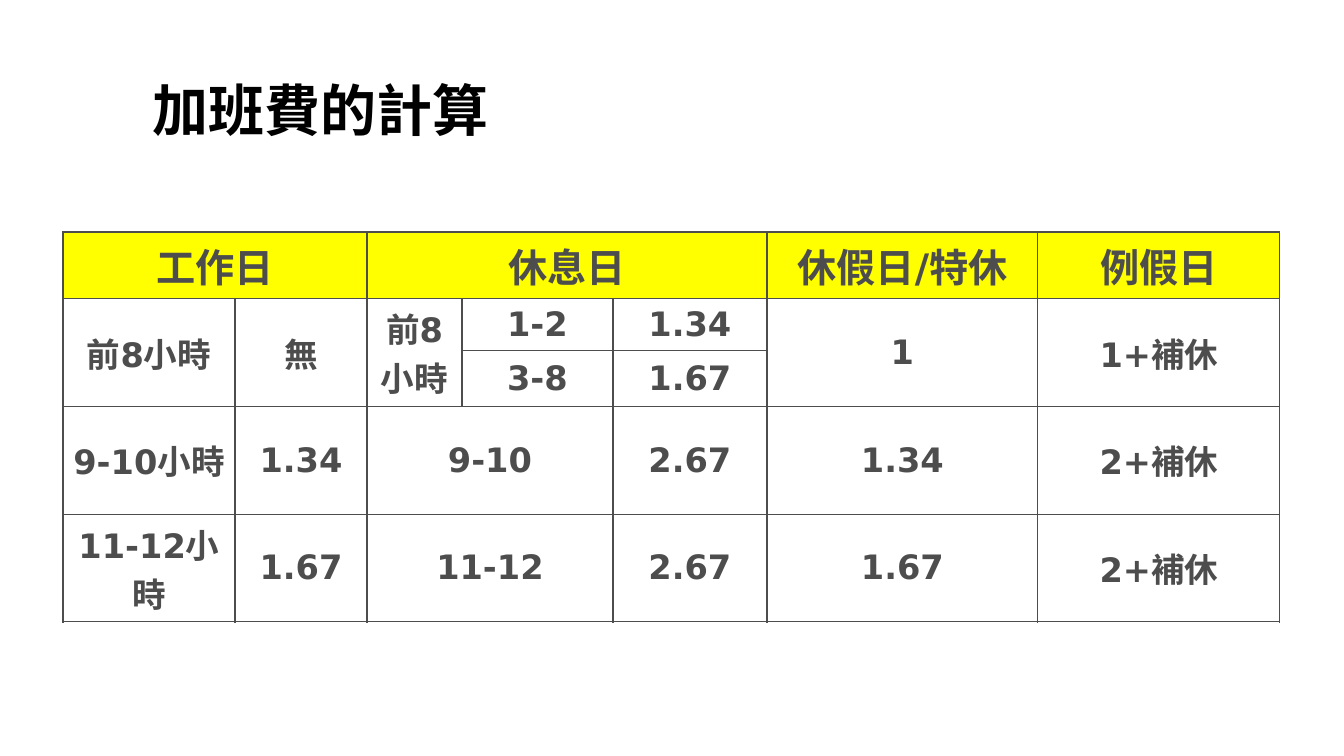
from lxml import etree
from pptx import Presentation, util as u
from pptx.dml.color import RGBColor
from pptx.enum import text
from pptx.oxml import ns

HUES = {"title": "000000", "ink": "4D4D4D", "head": "FFFF00"}
LATIN, HAN = "DejaVu Sans", "Noto Sans CJK SC"
WIDTHS = [172, 132, 95, 151, 154, 271, 242]
HEIGHTS = [66, 52, 55, 108, 107]
ROWS = [
    ["工作日", "", "休息日", "", "", "休假日/特休", "例假日"],
    ["前8小時", "無", "前8小時", "1-2", "1.34", "1", "1+補休"],
    ["", "", "", "3-8", "1.67", "", ""],
    ["9-10小時", "1.34", "9-10", "", "2.67", "1.34", "2+補休"],
    ["11-12小時", "1.67", "11-12", "", "2.67", "1.67", "2+補休"],
]
SPANS = [(0, 0, 0, 1), (0, 2, 0, 4), (3, 2, 3, 3), (4, 2, 4, 3)]
SPANS += [(1, col, 2, col) for col in (0, 1, 2, 5, 6)]


def px(count):
    """Turn px into EMU."""
    return u.Emu(round(count * 914400 / 100.8))


def put(item, **values):
    """Set each attribute of an item."""
    for name, value in values.items():
        setattr(item, name, value)


def write(frame, words, size, face, hue, align):
    """Write one bold line in a text frame."""
    line = frame.paragraphs[0]
    line.alignment = align
    run = line.add_run()
    run.text = words
    put(run.font, size=u.Pt(size), bold=True, name=face)
    run.font.color.rgb = RGBColor.from_string(HUES[hue])
    etree.SubElement(run.font._element, ns.qn("a:ea"), typeface=HAN)


def edge(cell):
    """Draw a thin line on all four sides of a cell."""
    props = cell._tc.get_or_add_tcPr()
    for side in "LRTB":
        line = etree.SubElement(props, ns.qn(f"a:ln{side}"), w=str(u.Pt(1)))
        fill = etree.SubElement(line, ns.qn("a:solidFill"))
        etree.SubElement(fill, ns.qn("a:srgbClr"), val=HUES["ink"])


def title(slide, left, top, width, height):
    """Place the title in its box."""
    shape = slide.shapes.title
    put(shape, left=px(left), top=px(top), width=px(width), height=px(height))
    frame = shape.text_frame
    put(frame, margin_left=px(6), margin_top=px(6), margin_right=px(10),
        margin_bottom=px(6), word_wrap=True, auto_size=text.MSO_AUTO_SIZE.NONE,
        vertical_anchor=text.MSO_ANCHOR.MIDDLE)
    write(frame, "加班費的計算", 40, HAN, "title", text.PP_ALIGN.LEFT)


def rates(slide, left, top):
    """Place the table of overtime rates."""
    table = slide.shapes.add_table(
        len(HEIGHTS), len(WIDTHS), px(left), px(top),
        px(sum(WIDTHS)), px(sum(HEIGHTS))).table
    put(table, first_row=False, horz_banding=False)
    for col, width in zip(table.columns, WIDTHS):
        col.width = px(width)
    for row, height in zip(table.rows, HEIGHTS):
        row.height = px(height)
    for top_row, first, end_row, last in SPANS:
        table.cell(top_row, first).merge(table.cell(end_row, last))
    for r, row in enumerate(ROWS):
        for c, words in enumerate(row):
            cell = table.cell(r, c)
            edge(cell)
            cell.vertical_anchor = text.MSO_ANCHOR.MIDDLE
            if r == 0:
                cell.fill.solid()
                cell.fill.fore_color.rgb = RGBColor.from_string(HUES["head"])
            else:
                cell.fill.background()
            if words:
                write(cell.text_frame, words, 24 if r else 28, LATIN, "ink",
                      text.PP_ALIGN.CENTER)


def main():
    """Build and save the slide."""
    deck = Presentation()
    put(deck, slide_width=px(1344), slide_height=px(756))
    slide = deck.slides.add_slide(deck.slide_layouts[5])
    title(slide, 147, 38, 1022, 143)
    rates(slide, 63, 232)
    deck.save("out.pptx")


if __name__ == "__main__":
    main()
